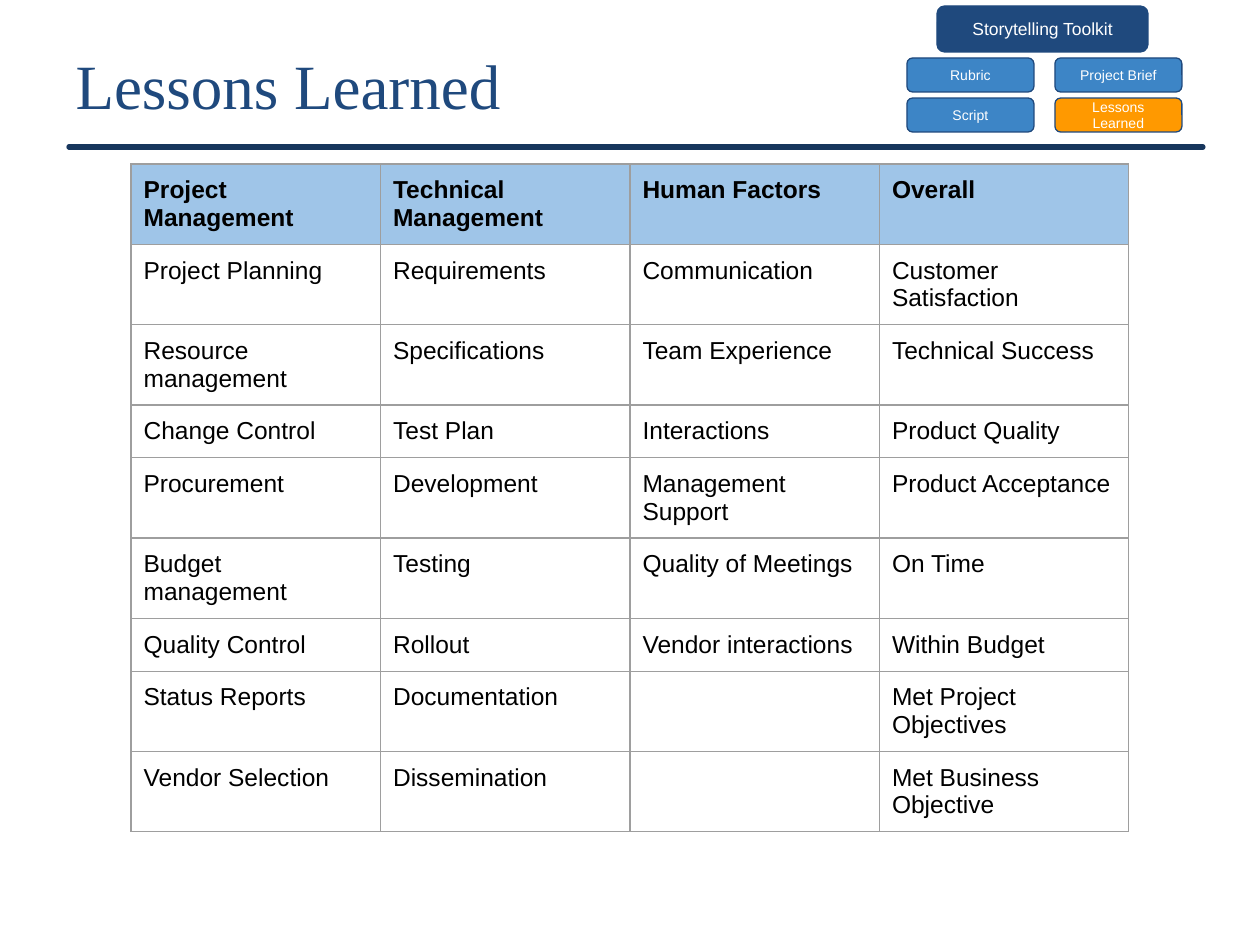
"""Build the Lessons Learned slide with its toolkit navigation and topic table."""

from lxml.etree import SubElement
from pptx import Presentation
from pptx.dml.color import RGBColor
from pptx.enum.shapes import MSO_CONNECTOR, MSO_SHAPE
from pptx.enum.text import MSO_ANCHOR, MSO_AUTO_SIZE, PP_ALIGN
from pptx.oxml.ns import qn
from pptx.util import Emu, Inches, Pt

COLORS = {
    "navy": "1F497D",
    "rule": "17365D",
    "blue": "3D85C6",
    "orange": "FF9900",
    "header": "9FC5E8",
    "border": "9E9E9E",
    "white": "FFFFFF",
    "black": "000000",
}
TITLE = "Lessons Learned"
TOOLKIT = "Storytelling Toolkit"
TOOLS = [["Rubric", "Project Brief"], ["Script", "Lessons Learned"]]
TOPICS = [
    ["Project Management", "Technical Management", "Human Factors", "Overall"],
    ["Project Planning", "Requirements", "Communication", "Customer Satisfaction"],
    ["Resource management", "Specifications", "Team Experience", "Technical Success"],
    ["Change Control", "Test Plan", "Interactions", "Product Quality"],
    ["Procurement", "Development", "Management Support", "Product Acceptance"],
    ["Budget management", "Testing", "Quality of Meetings", "On Time"],
    ["Quality Control", "Rollout", "Vendor interactions", "Within Budget"],
    ["Status Reports", "Documentation", "", "Met Project Objectives"],
    ["Vendor Selection", "Dissemination", "", "Met Business Objective"],
]
SHORT_ROWS = {3, 6}
INSET = Inches(0.1)


def px(length):
    return Emu(round(length * 914400 / 126))


def rgb(name):
    return RGBColor.from_string(COLORS[name])


def write(frame, text, size, color, font="Arial", bold=False, align=PP_ALIGN.LEFT):
    frame.word_wrap = True
    frame.margin_left = frame.margin_right = INSET
    frame.margin_top = frame.margin_bottom = INSET
    para = frame.paragraphs[0]
    para.alignment = align
    span = para.add_run()
    span.text = text
    span.font.size = Pt(size)
    span.font.name = font
    span.font.bold = bold
    span.font.color.rgb = rgb(color)


def add_button(group, text, left, top, width, height, fill, size):
    box = group.shapes.add_shape(
        MSO_SHAPE.ROUNDED_RECTANGLE, px(left), px(top), px(width), px(height)
    )
    box.shadow.inherit = False
    box.fill.solid()
    box.fill.fore_color.rgb = rgb(fill)
    box.line.color.rgb = rgb("navy")
    box.line.width = Pt(0.75)
    box.text_frame.vertical_anchor = MSO_ANCHOR.MIDDLE
    write(box.text_frame, text, size, "white", align=PP_ALIGN.CENTER)


def add_borders(cell):
    properties = cell._tc.get_or_add_tcPr()
    for position, side in enumerate(("a:lnL", "a:lnR", "a:lnT", "a:lnB")):
        line = SubElement(properties, qn(side), w=str(Pt(0.75)))
        fill = SubElement(line, qn("a:solidFill"))
        SubElement(fill, qn("a:srgbClr"), val=COLORS["border"])
        properties.insert(position, line)


def add_title(page):
    title = page.shapes.title
    title.left, title.top, title.width, title.height = px(63), px(42), px(1134), px(84)
    title.text_frame.auto_size = MSO_AUTO_SIZE.NONE
    title.text_frame.vertical_anchor = MSO_ANCHOR.MIDDLE
    write(title.text_frame, TITLE, 36, "navy", font="Times New Roman")


def add_rule(page):
    rule = page.shapes.add_connector(
        MSO_CONNECTOR.STRAIGHT, px(69), px(147), px(1203), px(147)
    )
    rule.line.color.rgb = rgb("rule")
    rule.line.width = Pt(3)
    rule.line._get_or_add_ln().set("cap", "rnd")
    SubElement(rule._element.spPr, qn("a:effectLst"))


def add_navigation(page):
    group = page.shapes.add_group_shape()
    add_button(group, TOOLKIT, 937, 6, 211, 46, "navy", 10)
    for row, names in enumerate(TOOLS):
        for column, name in enumerate(names):
            fill = "orange" if name == TITLE else "blue"
            add_button(group, name, 907 + 148 * column, 58 + 40 * row, 127, 34, fill, 8)


def add_topics(page):
    heights = [52 if row in SHORT_ROWS else 80 for row in range(len(TOPICS))]
    width, columns = 998, len(TOPICS[0])
    table = page.shapes.add_table(
        len(TOPICS), columns, px(131), px(164), px(width), px(sum(heights))
    ).table
    table.first_row = table.horz_banding = False
    for column in table.columns:
        column.width = px(width / columns)
    for row, (names, height) in enumerate(zip(TOPICS, heights)):
        table.rows[row].height = px(height)
        for column, name in enumerate(names):
            cell = table.cell(row, column)
            cell.margin_left = cell.margin_right = INSET
            cell.margin_top = cell.margin_bottom = INSET
            if row == 0:
                cell.fill.solid()
                cell.fill.fore_color.rgb = rgb("header")
            else:
                cell.fill.background()
            if name:
                write(cell.text_frame, name, 14, "black", bold=row == 0)
                cell.margin_left = cell.margin_right = INSET
            add_borders(cell)


def main():
    deck = Presentation()
    deck.slide_width, deck.slide_height = px(1260), px(945)
    page = deck.slides.add_slide(deck.slide_layouts[5])
    add_rule(page)
    add_topics(page)
    add_navigation(page)
    add_title(page)
    deck.save("out.pptx")


if __name__ == "__main__":
    main()
